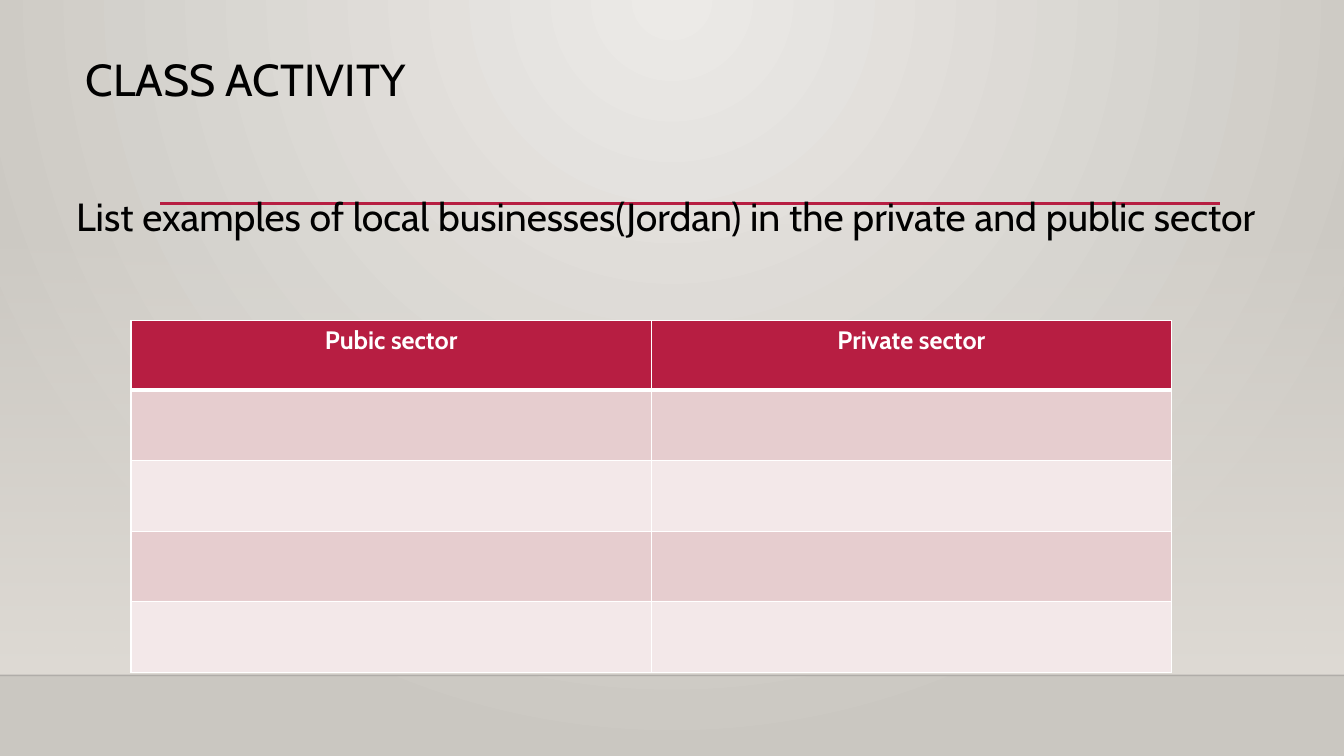
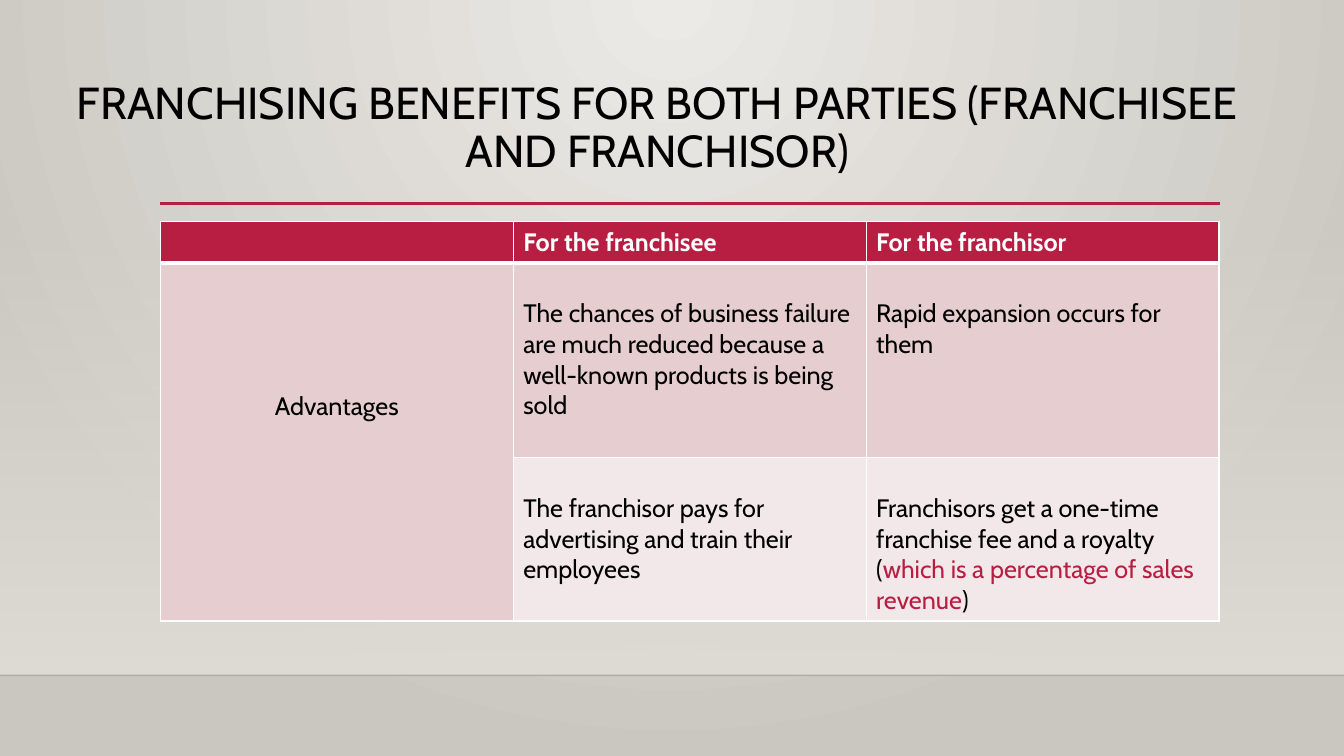
import dataclasses

import pptx
import pptx.dml.color
import pptx.enum.shapes
import pptx.enum.text
import pptx.oxml
import pptx.oxml.ns
import pptx.util
from pptx.util import Inches

ALIGN = pptx.enum.text.PP_ALIGN
DRAWING = pptx.oxml.ns.nsdecls("a")
RADIAL = ('<a:path path="circle"><a:fillToRect l="43000" t="0" r="43000" b="100000"/>'
          "</a:path>")
DOWNWARD = '<a:lin ang="5400000" scaled="0"/>'


@dataclasses.dataclass(frozen=True)
class Theme:
    font: str = "Cabin"
    title_size: int = 32
    body_size: int = 28
    table_size: int = 18
    text: str = "000000"
    light: str = "FFFFFF"
    accent: str = "B71E42"
    bands: tuple = ("E6CDCF", "F3E8E9")
    background: tuple = ("ECEAE7", "CAC7C1")
    wall: str = "DFDBD5"
    floor_line: str = "000001"


def rgb(value):
    return pptx.dml.color.RGBColor.from_string(value)


def set_gradient(element, start, end, direction, start_alpha=100):
    """Replace the first solid fill inside the element by a two-stop gradient."""
    solid = element.find(".//" + pptx.oxml.ns.qn("a:solidFill"))
    gradient = pptx.oxml.parse_xml(
        f'<a:gradFill {DRAWING} rotWithShape="1"><a:gsLst>'
        f'<a:gs pos="0"><a:srgbClr val="{start}"><a:alpha val="{start_alpha * 1000}"/>'
        f'</a:srgbClr></a:gs><a:gs pos="100000"><a:srgbClr val="{end}"/></a:gs>'
        f"</a:gsLst>{direction}</a:gradFill>")
    solid.getparent().replace(solid, gradient)


def set_borders(cell, color, top=1, bottom=1):
    """Draw the four cell borders; widths are in points."""
    properties = cell._tc.get_or_add_tcPr()
    widths = {"lnL": 1, "lnR": 1, "lnT": top, "lnB": bottom}
    for index, (tag, width) in enumerate(widths.items()):
        properties.insert(index, pptx.oxml.parse_xml(
            f'<a:{tag} {DRAWING} w="{pptx.util.Pt(width)}"><a:solidFill>'
            f'<a:srgbClr val="{color}"/></a:solidFill></a:{tag}>'))


class Deck:
    def __init__(self, theme):
        self.theme = theme
        self.presentation = pptx.Presentation()
        self.presentation.slide_width = Inches(13.33)
        self.presentation.slide_height = Inches(7.5)
        self.slide = None
        master = self.presentation.slide_master
        master.background.fill.solid()
        set_gradient(master.element, *theme.background, RADIAL)

    def add_slide(self):
        """Start a title-only slide with the shared wall, floor and accent lines."""
        self.slide = self.presentation.slides.add_slide(
            self.presentation.slide_layouts[5])
        wall = self.slide.shapes.add_shape(
            pptx.enum.shapes.MSO_SHAPE.RECTANGLE,
            Inches(0), Inches(2.21), Inches(13.33), Inches(4.49))
        wall.shadow.inherit = False
        wall.fill.solid()
        set_gradient(wall._element, self.theme.wall, self.theme.wall, DOWNWARD, 0)
        wall.line.fill.background()
        self.add_line(0, 13.33, 6.7, self.theme.floor_line, 1, 20)
        self.add_line(1.59, 12.1, 2.02, self.theme.accent, 2.5)

    def add_line(self, left, right, y, color, width, alpha=100):
        line = self.slide.shapes.add_connector(
            pptx.enum.shapes.MSO_CONNECTOR.STRAIGHT,
            Inches(left), Inches(y), Inches(right), Inches(y))
        line.line.color.rgb = rgb(color)
        line.line.width = pptx.util.Pt(width)
        line._element.spPr.append(pptx.oxml.parse_xml(f"<a:effectLst {DRAWING}/>"))
        if alpha < 100:
            color_element = line._element.spPr.find(".//" + pptx.oxml.ns.qn("a:srgbClr"))
            color_element.append(pptx.oxml.parse_xml(
                f'<a:alpha {DRAWING} val="{alpha * 1000}"/>'))

    def add_runs(self, frame, runs, size, align=ALIGN.LEFT, spacing=1.0, bold=False):
        """Fill the first paragraph with (text, color) runs."""
        frame.word_wrap = True
        paragraph = frame.paragraphs[0]
        paragraph.alignment = align
        paragraph.line_spacing = spacing
        for text, color in runs:
            run = paragraph.add_run()
            run.text = text
            run.font.name = self.theme.font
            run.font.size = pptx.util.Pt(size)
            run.font.bold = bold
            run.font.color.rgb = rgb(color)

    def add_title(self, text, left, top, width, height, align=ALIGN.LEFT):
        title = self.slide.shapes.title
        title.left, title.top = Inches(left), Inches(top)
        title.width, title.height = Inches(width), Inches(height)
        frame = title.text_frame
        frame.auto_size = pptx.enum.text.MSO_AUTO_SIZE.NONE
        frame.vertical_anchor = pptx.enum.text.MSO_ANCHOR.TOP
        self.add_runs(frame, [(text, self.theme.text)], self.theme.title_size, align, 0.9)

    def add_body(self, text, left, top, width, height):
        box = self.slide.shapes.add_textbox(
            Inches(left), Inches(top), Inches(width), Inches(height))
        self.add_runs(box.text_frame, [(text, self.theme.text)],
                      self.theme.body_size, ALIGN.CENTER, 1.2)

    def add_table(self, left, top, column_widths, row_heights, header,
                  header_align=ALIGN.LEFT):
        """Add a banded table with its header row filled in."""
        table = self.slide.shapes.add_table(
            len(row_heights), len(column_widths), Inches(left), Inches(top),
            Inches(sum(column_widths)), Inches(sum(row_heights))).table
        for column, width in zip(table.columns, column_widths):
            column.width = Inches(width)
        for index, (row, height) in enumerate(zip(table.rows, row_heights)):
            row.height = Inches(height)
            color = self.theme.bands[(index - 1) % 2] if index else self.theme.accent
            for cell in row.cells:
                cell.fill.solid()
                cell.fill.fore_color.rgb = rgb(color)
                set_borders(cell, self.theme.light, top=3 if index == 1 else 1,
                            bottom=1 if index else 3)
        for cell, text in zip(table.rows[0].cells, header):
            if text:
                self.add_runs(cell.text_frame, [(text, self.theme.light)],
                              self.theme.table_size, header_align, bold=True)
        return table

    def fill_cell(self, cell, runs, top_margin, align=ALIGN.LEFT):
        cell.margin_top = Inches(top_margin)
        self.add_runs(cell.text_frame, runs, self.theme.table_size, align)


def build_class_activity(deck):
    deck.add_slide()
    deck.add_title("CLASS ACTIVITY", 0.75, 0.52, 9.42, 1.41)
    deck.add_body("List examples of local businesses(Jordan) in the private and public sector",
                  0.16, 1.77, 12.88, 5.39)
    deck.add_table(1.3, 3.18, [5.16] * 2, [0.69] + [0.7] * 4,
                   ["Pubic sector", "Private sector"], ALIGN.CENTER)


def build_franchising(deck):
    theme = deck.theme
    deck.add_slide()
    deck.add_title("FRANCHISING BENEFITS FOR BOTH PARTIES (FRANCHISEE AND FRANCHISOR)",
                   0.17, 0.75, 12.7, 1.35, ALIGN.CENTER)
    table = deck.add_table(1.59, 2.2, [3.5] * 3, [0.41, 1.93, 1.62],
                           ["", "For the franchisee", "For the franchisor"])
    table.cell(1, 0).merge(table.cell(2, 0))
    deck.fill_cell(table.cell(1, 0), [("Advantages", theme.text)], 1.27, ALIGN.CENTER)
    advantages = [
        [[("The chances of business failure are much reduced because a well-known "
           "products is being sold", theme.text)],
         [("Rapid expansion occurs for them", theme.text)]],
        [[("The franchisor pays for advertising and train their employees", theme.text)],
         [("Franchisors get a one-time franchise fee and a royalty (", theme.text),
          ("which is a percentage of sales revenue", theme.accent),
          (")", theme.text)]],
    ]
    for row, cells in enumerate(advantages, 1):
        for column, runs in enumerate(cells, 1):
            deck.fill_cell(table.cell(row, column), runs, 0.35)


def main():
    deck = Deck(Theme())
    build_class_activity(deck)
    build_franchising(deck)
    deck.presentation.save("out.pptx")


if __name__ == "__main__":
    main()
